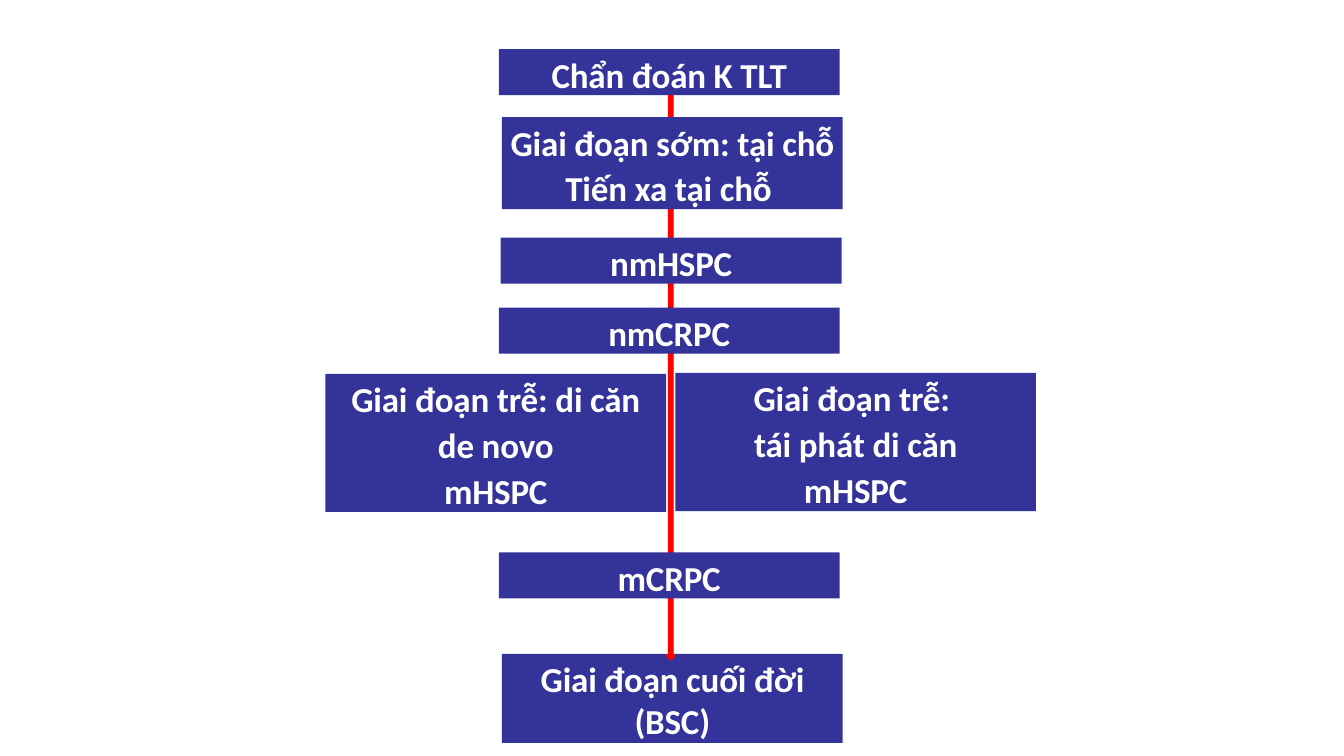
"""Build a flow chart slide of the stages of prostate cancer."""
from pptx import Presentation
from pptx.dml.color import RGBColor
from pptx.enum.shapes import MSO_SHAPE
from pptx.enum.text import MSO_ANCHOR, MSO_AUTO_SIZE, PP_ALIGN
from pptx.util import Cm, Pt

RECT, ARROW = MSO_SHAPE.RECTANGLE, MSO_SHAPE.DOWN_ARROW
TOP, GROW, CENTER = MSO_ANCHOR.TOP, MSO_AUTO_SIZE.SHAPE_TO_FIT_TEXT, PP_ALIGN.CENTER
NAVY = RGBColor(0x33, 0x33, 0x99)
RED = RGBColor(0xFF, 0, 0)
WHITE = RGBColor(0xFF, 0xFF, 0xFF)

WIDTH, ROW = 8.59, 1.16
ENDS = [
    ("Chẩn đoán K TLT", 12.57, 1.24, WIDTH, ROW),
    ("Giai đoạn cuối đời (BSC)", 12.65, 16.48, WIDTH, 2.24),
]
STAGES = [
    ("Giai đoạn sớm: tại chỗ\nTiến xa tại chỗ ", 12.65, 2.95, WIDTH, 2 * ROW),
    ("nmHSPC", 12.62, 5.99, WIDTH, ROW),
    ("nmCRPC", 12.57, 7.75, WIDTH, ROW),
    ("Giai đoạn trễ: di căn\nde novo\nmHSPC", 8.2, 9.42, WIDTH, 3 * ROW),
    ("Giai đoạn trễ: \ntái phát di căn\nmHSPC", 17.02, 9.4, 9.09, 3 * ROW),
    ("mCRPC", 12.57, 13.92, WIDTH, ROW),
]
SPINE = (16.79, 2.41, 0.23, 14.22)


def add_form(slide, kind, place, color):
    form = slide.shapes.add_shape(kind, *map(Cm, place))
    form.shadow.inherit = False
    form.fill.solid()
    form.fill.fore_color.rgb = color
    return form


def add_stage(slide, text, *place):
    box = add_form(slide, RECT, place, NAVY)
    box.line.fill.background()
    frame = box.text_frame
    frame.text = text
    frame.word_wrap = True
    frame.auto_size = GROW
    frame.vertical_anchor = TOP
    frame.margin_left = frame.margin_right = frame.margin_bottom = 0
    frame.margin_top = Cm(0.1)
    for line in frame.paragraphs:
        line.alignment = CENTER
        line.space_before = Pt(2.6)
        for run in line.runs:
            font = run.font
            font.name, font.size, font.bold = "Calibri", Pt(25), True
            font.color.rgb = WHITE
            run._r.get_or_add_rPr().set("spc", "-10")


def main():
    deck = Presentation()
    deck.slide_width, deck.slide_height = Cm(33.87), Cm(19.05)
    slide = deck.slides.add_slide(deck.slide_layouts[6])
    for stage in ENDS:
        add_stage(slide, *stage)
    spine = add_form(slide, ARROW, SPINE, RED)
    spine.line.color.rgb = RED
    spine.line.width = Pt(1)
    for stage in STAGES:
        add_stage(slide, *stage)
    deck.save("out.pptx")


if __name__ == "__main__":
    main()
